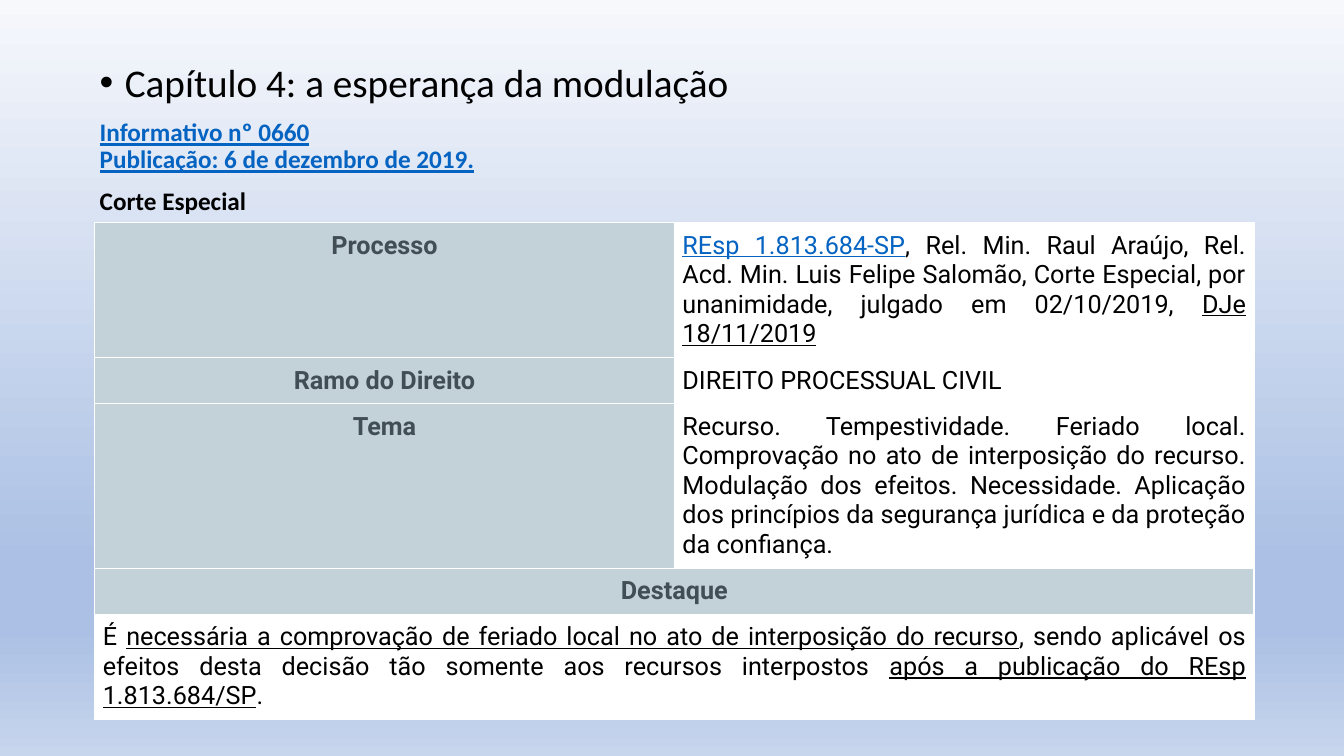
from dataclasses import dataclass

from lxml import etree
from pptx import Presentation
from pptx.dml.color import RGBColor
from pptx.enum.text import MSO_ANCHOR, MSO_AUTO_SIZE, PP_ALIGN
from pptx.oxml.ns import qn
from pptx.util import Pt

CENTER, JUSTIFY, LEFT = PP_ALIGN.CENTER, PP_ALIGN.JUSTIFY, PP_ALIGN.LEFT
TOP, NO_AUTOFIT = MSO_ANCHOR.TOP, MSO_AUTO_SIZE.NONE


@dataclass(frozen=True)
class Theme:
    heading_font: str = "Calibri"
    table_font: str = "Roboto"
    heading_size: int = 28
    text_size: int = 18
    text: str = "000000"
    link: str = "0563C1"
    label: str = "414F55"
    label_fill: str = "C3D1D9"
    white: str = "FFFFFF"
    gradient: tuple = ((0, "F6F8FC"), (74, "ABC0E4"), (83, "ABC0E4"), (100, "C7D5ED"))


THEME = Theme()


@dataclass(frozen=True)
class Span:
    text: str
    color: str = THEME.text
    bold: bool = False
    underline: bool = False
    font: str = THEME.table_font
    size: int = THEME.text_size


@dataclass(frozen=True)
class Heading:
    lines: tuple
    bullet: bool = False


@dataclass(frozen=True)
class Entry:
    spans: tuple
    fill: str = THEME.white
    align: PP_ALIGN = JUSTIFY


@dataclass(frozen=True)
class Row:
    height: float
    entries: tuple


def label(text: str) -> Entry:
    return Entry((Span(text, THEME.label, bold=True),), THEME.label_fill, CENTER)


def heading_span(text: str, **style) -> Span:
    return Span(text, font=THEME.heading_font, **style)


HEADINGS = (
    Heading((heading_span("Capítulo 4: a esperança da modulação", size=THEME.heading_size),), True),
    Heading(tuple(
        heading_span(line, color=THEME.link, bold=True, underline=True)
        for line in ("Informativo nº 0660", "Publicação: 6 de dezembro de 2019.")
    )),
    Heading((heading_span("Corte Especial", bold=True),)),
)

ROWS = (
    Row(96.4, (label("Processo"), Entry((
        Span("REsp 1.813.684-SP", THEME.link, underline=True),
        Span(", Rel. Min. Raul Araújo, Rel. Acd. Min. Luis Felipe Salomão, Corte Especial, "
             "por unanimidade, julgado em 02/10/2019, "),
        Span("DJe 18/11/2019", underline=True),
    )))),
    Row(32.9, (label("Ramo do Direito"), Entry((Span("DIREITO PROCESSUAL CIVIL"),), align=LEFT))),
    Row(117.6, (label("Tema"), Entry((
        Span("Recurso. Tempestividade. Feriado local. Comprovação no ato de interposição do "
             "recurso. Modulação dos efeitos. Necessidade. Aplicação dos princípios da "
             "segurança jurídica e da proteção da confiança."),
    )))),
    Row(32.9, (label("Destaque"),)),
    Row(75, (Entry((
        Span("É "),
        Span("necessária a comprovação de feriado local no ato de interposição do recurso",
             underline=True),
        Span(", sendo aplicável os efeitos desta decisão tão somente aos recursos interpostos "),
        Span("após a publicação do REsp 1.813.684/SP", underline=True),
        Span("."),
    )),)),
)


def add_span(paragraph, span: Span) -> None:
    run = paragraph.add_run()
    run.text = span.text
    run.font.name = span.font
    run.font.size = Pt(span.size)
    run.font.bold = span.bold
    run.font.underline = span.underline
    run.font.color.rgb = RGBColor.from_string(span.color)


def add_color(parent, color: str) -> None:
    etree.SubElement(parent, qn("a:srgbClr"), val=color)


def paint_background(slide) -> None:
    fill = slide.background.fill
    fill.gradient()
    fill.gradient_angle = 270
    stops = next(slide.element.iter(qn("a:gsLst")))
    for stop in list(stops):
        stops.remove(stop)
    for percent, color in THEME.gradient:
        add_color(etree.SubElement(stops, qn("a:gs"), pos=str(percent * 1000)), color)


def set_bullet(paragraph, bullet: bool) -> None:
    properties = paragraph._p.get_or_add_pPr()
    indent = Pt(18) if bullet else 0
    properties.set("marL", str(indent))
    properties.set("indent", str(-indent))
    if bullet:
        etree.SubElement(properties, qn("a:buFont"), typeface="Arial")
        etree.SubElement(properties, qn("a:buChar"), char="•")
    else:
        etree.SubElement(properties, qn("a:buNone"))


def write_headings(body) -> None:
    body.left, body.top, body.width, body.height = Pt(64), Pt(41.8), Pt(829.4), Pt(457.9)
    frame = body.text_frame
    frame.word_wrap = True
    frame.auto_size = NO_AUTOFIT
    frame.vertical_anchor = TOP
    for index, heading in enumerate(HEADINGS):
        paragraph = frame.add_paragraph() if index else frame.paragraphs[0]
        set_bullet(paragraph, heading.bullet)
        paragraph.alignment = LEFT
        paragraph.line_spacing = 0.9
        paragraph.space_before = Pt(10 if index else 0)
        for number, line in enumerate(heading.lines):
            if number:
                paragraph.add_line_break()
            add_span(paragraph, line)


def style_cell(cell, fill: str) -> None:
    cell.margin_left = cell.margin_right = cell.margin_top = cell.margin_bottom = Pt(5.8)
    cell.vertical_anchor = TOP
    cell.fill.solid()
    cell.fill.fore_color.rgb = RGBColor.from_string(fill)
    properties = cell._tc.get_or_add_tcPr()
    for position, side in enumerate(("lnL", "lnR", "lnT", "lnB")):
        border = etree.Element(qn(f"a:{side}"), w=str(Pt(1)))
        add_color(etree.SubElement(border, qn("a:solidFill")), THEME.white)
        properties.insert(position, border)


def add_ruling_table(slide) -> None:
    height = sum(row.height for row in ROWS)
    ruling = slide.shapes.add_table(len(ROWS), 2, Pt(67.7), Pt(159.1), Pt(828), Pt(height)).table
    ruling.first_row = ruling.horz_banding = False
    for index, row in enumerate(ROWS):
        ruling.rows[index].height = Pt(row.height)
        for column in range(2):
            style_cell(ruling.cell(index, column), row.entries[min(column, len(row.entries) - 1)].fill)
        if len(row.entries) == 1:
            ruling.cell(index, 0).merge(ruling.cell(index, 1))
        for column, entry in enumerate(row.entries):
            paragraph = ruling.cell(index, column).text_frame.paragraphs[0]
            paragraph.alignment = entry.align
            for span in entry.spans:
                add_span(paragraph, span)


def main() -> None:
    presentation = Presentation()
    presentation.slide_width, presentation.slide_height = Pt(960), Pt(540)
    slide = presentation.slides.add_slide(presentation.slide_layouts[1])
    paint_background(slide)
    title = slide.shapes.title.element
    title.getparent().remove(title)
    write_headings(slide.placeholders[1])
    add_ruling_table(slide)
    presentation.save("out.pptx")


if __name__ == "__main__":
    main()
